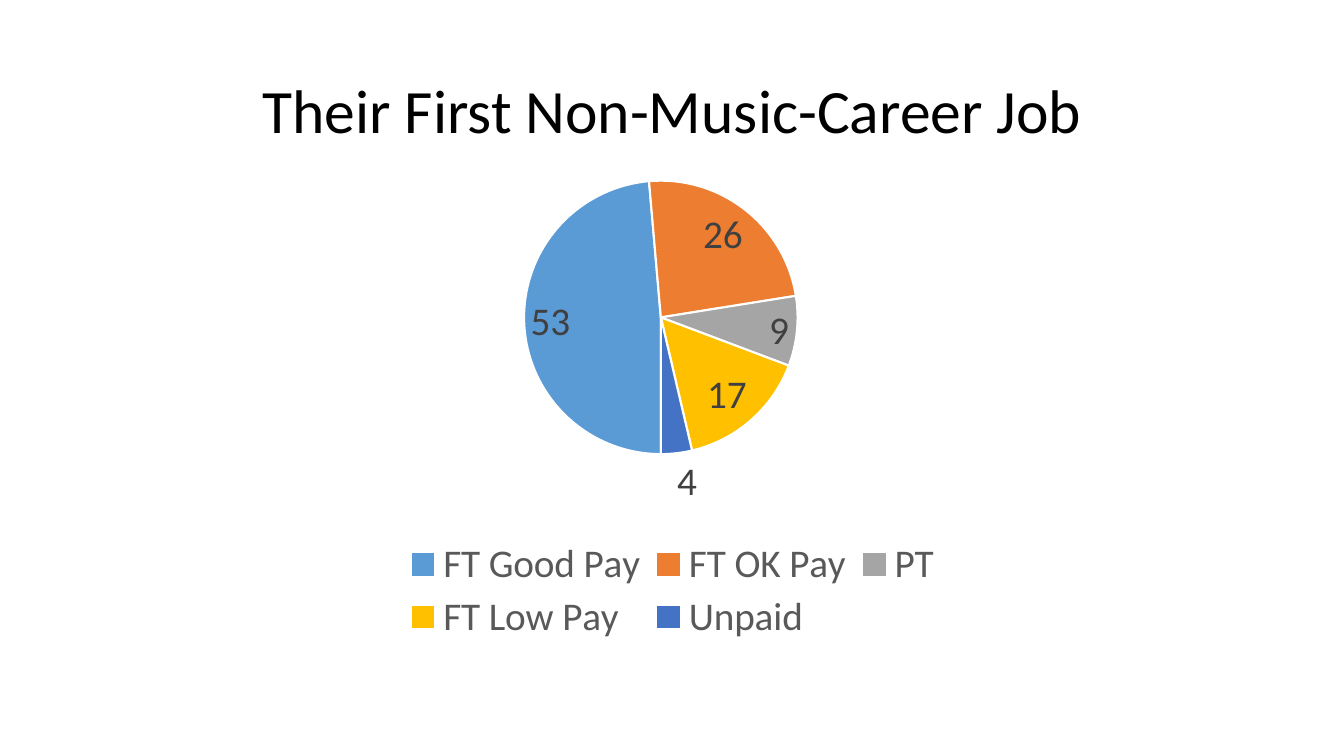
from dataclasses import dataclass

from lxml.etree import SubElement
from pptx import Presentation
from pptx.chart.data import CategoryChartData
from pptx.dml.color import RGBColor
from pptx.enum.chart import XL_CHART_TYPE, XL_LABEL_POSITION, XL_LEGEND_POSITION
from pptx.enum.text import MSO_ANCHOR, PP_ALIGN
from pptx.oxml import parse_xml
from pptx.oxml.ns import nsdecls, qn
from pptx.util import Pt

SCALE = 9144  # EMU in one px, 100 px to the inch


@dataclass(frozen=True)
class Theme:
    font: str = "Calibri"
    black: str = "000000"
    white: str = "FFFFFF"
    label: str = "404040"
    legend: str = "595959"
    slices: tuple = ("5B9BD5", "ED7D31", "A5A5A5", "FFC000", "4472C4")
    title_size: int = 44
    chart_size: int = 28
    base_size: int = 10


class Deck:
    def __init__(self, theme, width, height):
        self.theme = theme
        self.show = Presentation()
        self.show.slide_width = width * SCALE
        self.show.slide_height = height * SCALE
        self.slide = self.show.slides.add_slide(self.show.slide_layouts[6])

    def style(self, font, size, color):
        font.name = self.theme.font
        font.size = Pt(size)
        font.color.rgb = RGBColor.from_string(color)

    def title(self, text, *box):
        frame = self.slide.shapes.add_textbox(*(n * SCALE for n in box)).text_frame
        frame.word_wrap = True
        frame.vertical_anchor = MSO_ANCHOR.MIDDLE
        line = frame.paragraphs[0]
        line.text = text
        line.alignment = PP_ALIGN.CENTER
        line.line_spacing = 0.9
        self.style(line.font, self.theme.title_size, self.theme.black)

    def pie(self, shares, angle, *box):
        theme = self.theme
        data = CategoryChartData()
        data.categories = list(shares)
        data.add_series("Series 1", list(shares.values()))
        chart = self.slide.shapes.add_chart(
            XL_CHART_TYPE.PIE, *(n * SCALE for n in box), data).chart
        chart.has_title = False
        self.style(chart.font, theme.base_size, theme.black)

        plot = chart.plots[0]
        plot.vary_by_categories = True
        series = plot.series[0]
        for i, color in enumerate(theme.slices):
            form = series.points[i].format
            form.fill.solid()
            form.fill.fore_color.rgb = RGBColor.from_string(color)
            form.line.color.rgb = RGBColor.from_string(theme.white)
            form.line.width = Pt(1.5)

        labels = series.data_labels
        labels.show_value = True
        labels.position = XL_LABEL_POSITION.BEST_FIT
        self.style(labels.font, theme.chart_size, theme.label)

        chart.has_legend = True
        legend = chart.legend
        legend.position = XL_LEGEND_POSITION.BOTTOM
        legend.include_in_layout = False
        self.style(legend.font, theme.chart_size, theme.legend)

        root = chart._chartSpace
        ring = root.find(".//" + qn("c:pieChart"))
        SubElement(ring, qn("c:firstSliceAng")).set("val", str(angle))
        area = root.find(".//" + qn("c:plotArea"))
        self.place(area, 0, 0.37, 0.03, 0.24, 0.57, inner=True)
        self.place(root.find(".//" + qn("c:legend")), 1, 0.26, 0.77, 0.48, 0.23)

    def place(self, part, index, x, y, w, h, inner=False):
        """Fix a chart part at fractions of the chart's width and height."""
        for old in part.findall(qn("c:layout")):
            part.remove(old)
        target = '<c:layoutTarget val="inner"/>' if inner else ""
        modes = "".join(f'<c:{m}Mode val="edge"/>' for m in "xy")
        sizes = "".join(f'<c:{k} val="{v}"/>' for k, v in zip("xywh", (x, y, w, h)))
        part.insert(index, parse_xml(
            f'<c:layout {nsdecls("c")}><c:manualLayout>{target}{modes}{sizes}'
            "</c:manualLayout></c:layout>"))


def main():
    deck = Deck(Theme(), 1333, 750)
    deck.title("Their First Non-Music-Career Job", 92, 40, 1150, 145)
    shares = {"FT Good Pay": 53, "FT OK Pay": 26, "PT": 9, "FT Low Pay": 17, "Unpaid": 4}
    deck.pie(shares, 180, 92, 165, 1150, 476)
    deck.show.save("out.pptx")


if __name__ == "__main__":
    main()
